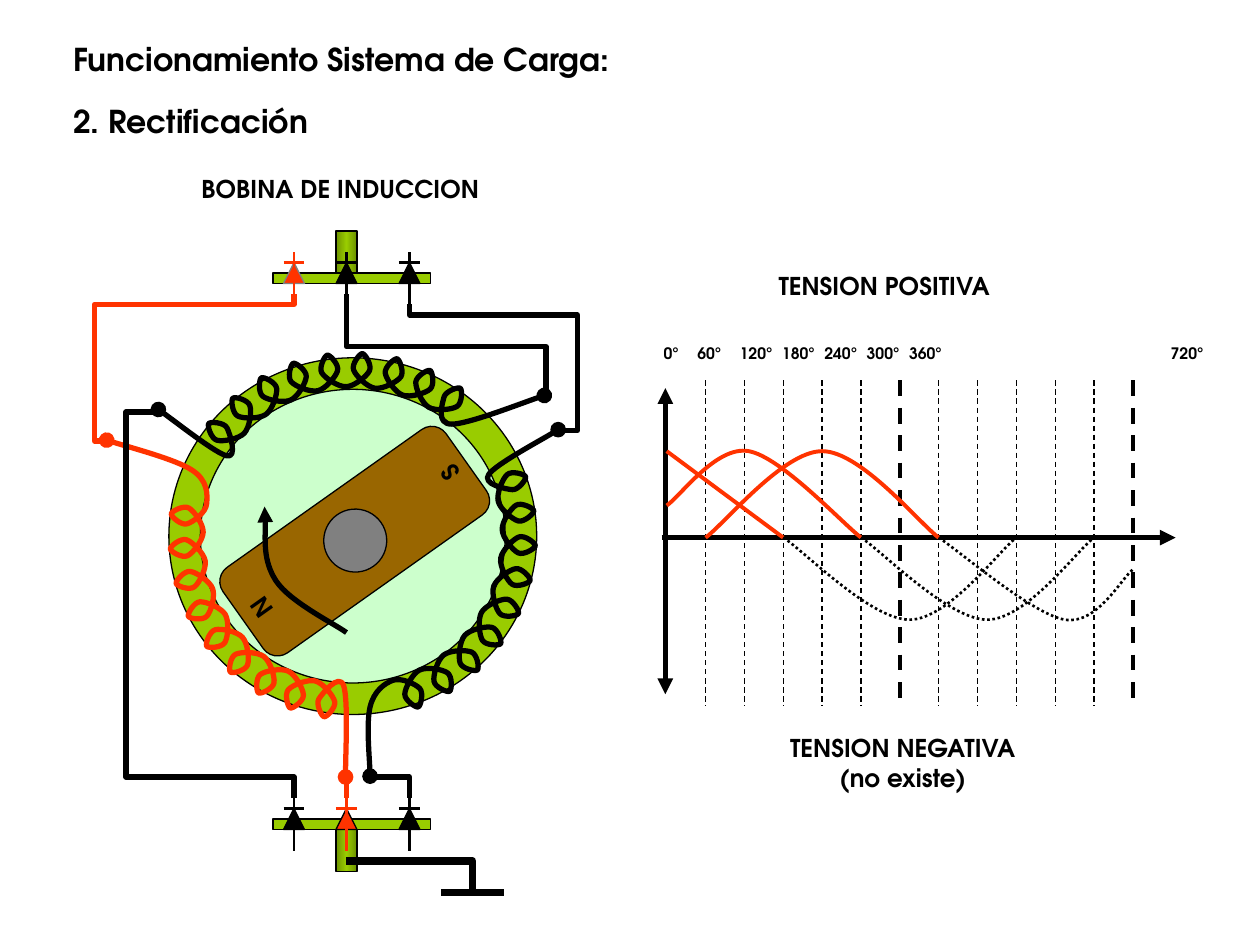
"""Build the slide about rectification in a vehicle charging system."""
from copy import deepcopy
from dataclasses import dataclass
from math import cos, pi, radians, sin

from lxml import etree
from pptx import Presentation
from pptx.dml.color import RGBColor
from pptx.enum.dml import MSO_LINE
from pptx.enum.shapes import MSO_CONNECTOR, MSO_SHAPE
from pptx.enum.text import MSO_ANCHOR, MSO_AUTO_SIZE, PP_ALIGN
from pptx.oxml.ns import qn
from pptx.util import Pt

STRAIGHT = MSO_CONNECTOR.STRAIGHT
OVAL, RECTANGLE = MSO_SHAPE.OVAL, MSO_SHAPE.RECTANGLE
ROUNDED, TRIANGLE = MSO_SHAPE.ROUNDED_RECTANGLE, MSO_SHAPE.ISOSCELES_TRIANGLE
DASH, DOTS = MSO_LINE.DASH, MSO_LINE.ROUND_DOT
LEFT, CENTER = PP_ALIGN.LEFT, PP_ALIGN.CENTER
TOP, GROW = MSO_ANCHOR.TOP, MSO_AUTO_SIZE.SHAPE_TO_FIT_TEXT
Point = tuple[float, float]
Points = list[Point]
Box = tuple[float, float, float, float]


@dataclass(frozen=True)
class Theme:
    font: str = "TeX Gyre Adventor"
    heading: float = 18
    label: float = 14
    scale: float = 9
    thin: float = 0.75
    wire: float = 3
    black: str = "000000"
    red: str = "FF3300"
    green: str = "99CC00"
    dark_green: str = "6D9200"
    mint: str = "CCFFCC"
    brown: str = "996600"
    gray: str = "808080"


THEME = Theme()


@dataclass(frozen=True)
class Stroke:
    color: str = THEME.black
    width: float = THEME.wire
    dash: MSO_LINE | None = None
    head: str = ""
    tail: str = ""


@dataclass(frozen=True)
class Label:
    text: str
    box: Box
    rotation: float = 0
    alignment: PP_ALIGN = LEFT


@dataclass(frozen=True)
class Coil:
    first_angle: float
    lead_in: Points
    lead_out: Points
    color: str = THEME.black


@dataclass(frozen=True)
class Wire:
    start: Point
    turns: list[float]
    color: str = THEME.black
    width: float = THEME.wire


RING_X, RING_Y, RING_RADIUS, LOOP_DEPTH = 201.6, 306.4, 95, 9.5
TURNS, TURN_ANGLE, LOOP_ANGLE = 9, 11, 5.5
ROTOR_ANGLE = 234.7
COLUMN_START, COLUMN_GAP, AXIS, AMPLITUDE = 403.2, 22.2, 307.2, 49.4
COILS = [
    Coil(212.5, [(90.5, 234)], [(311, 226)]),
    Coil(335.5, [(319, 245.5)], [(211.5, 404), (211.5, 443.5)]),
    Coil(93.5, [(197.5, 444)], [(109.5, 268.5), (61, 251.5)], THEME.red),
]
WIRES = [
    Wire((234, 456), [444, 210]),
    Wire((168, 456), [444, 72, 235.5, 91.5]),
    Wire((234, 174), [180, 330, 246, 318]),
    Wire((198, 168), [198, 312, 228]),
    Wire((168, 168), [174, 54, 252, 62], THEME.red),
    Wire((198, 492), [492, 270, 510], width=4.5),
]
POSITIVE_STARTS = {6: [(0, 0), (3, 1)], 4: [(-1, 0.37), (1.1, 1)], 2: [(-1, 1)]}
NEGATIVE_ENDS = {6: (11, -0.37), 4: (10, 0), 2: (8, 0)}
LABELS = [
    Label("BOBINA DE INDUCCION", (108, 95.8, 179.3, 24)),
    Label("TENSION POSITIVA", (437.8, 151.2, 136.8, 24)),
    Label("TENSION NEGATIVA\n(no existe)", (442.8, 415.4, 146.2, 41), alignment=CENTER),
]
POLES = [Label("N", (136.8, 334.8, 25.2, 24), ROTOR_ANGLE), Label("S", (245.5, 257.8, 22.3, 24), ROTOR_ANGLE)]
ANGLES = [f"{degrees}°" for degrees in (*range(0, 361, 60), 720)]
ANGLE_STOPS = [24.2 * index - 5 for index in range(1, 7)] + [289.7]


def apply_stroke(shape, stroke: Stroke) -> None:
    shape.line.color.rgb = RGBColor.from_string(stroke.color)
    shape.line.width = Pt(stroke.width)
    if stroke.dash:
        shape.line.dash_style = stroke.dash
    for tag, kind in (("a:headEnd", stroke.head), ("a:tailEnd", stroke.tail)):
        if kind:
            etree.SubElement(shape.line._get_or_add_ln(), qn(tag), type=kind)


def add_line(slide, start: Point, end: Point, stroke: Stroke) -> None:
    line = slide.shapes.add_connector(STRAIGHT, *(Pt(value) for value in start + end))
    apply_stroke(line, stroke)
    etree.SubElement(line._element.spPr, qn("a:effectLst"))


def add_outline(slide, points: Points, stroke: Stroke):
    corners = [(Pt(x), Pt(y)) for x, y in points]
    builder = slide.shapes.build_freeform(*corners[0])
    builder.add_line_segments(corners[1:], close=False)
    shape = builder.convert_to_shape()
    shape.fill.background()
    shape.shadow.inherit = False
    apply_stroke(shape, stroke)
    return shape


def smooth_controls(points: Points) -> Points:
    padded = [points[0], *points, points[-1]]
    controls = [points[0]]
    for before, start, end, after in zip(padded, padded[1:], padded[2:], padded[3:]):
        controls.append(tuple(s + (e - b) / 6 for b, s, e in zip(before, start, end)))
        controls.append(tuple(e - (a - s) / 6 for s, e, a in zip(start, end, after)))
        controls.append(end)
    return controls


def add_curve(slide, points: Points, stroke: Stroke) -> None:
    shape = add_outline(slide, smooth_controls(points), stroke)
    segments = list(shape._element.iter(qn("a:lnTo")))
    for first, second, third in zip(segments[::3], segments[1::3], segments[2::3]):
        first.tag = qn("a:cubicBezTo")
        for segment in (second, third):
            first.append(segment[0])
            segment.getparent().remove(segment)


def add_coil(slide, coil: Coil) -> None:
    loops = []
    for quarter in range(4 * TURNS + 1):
        phase = quarter * pi / 2
        angle = radians(coil.first_angle + TURN_ANGLE * quarter / 4 + LOOP_ANGLE * sin(phase))
        radius = RING_RADIUS - LOOP_DEPTH * cos(phase)
        loops.append((RING_X + radius * cos(angle), RING_Y + radius * sin(angle)))
    add_curve(slide, coil.lead_in + loops + coil.lead_out, Stroke(coil.color, head="oval", tail="oval"))


def add_wire(slide, wire: Wire) -> None:
    points = [wire.start]
    for index, value in enumerate(wire.turns):
        x, y = points[-1]
        points.append((value, y) if index % 2 else (x, value))
    add_outline(slide, points, Stroke(wire.color, wire.width))


def add_solid(slide, kind: MSO_SHAPE, box: Box, color: str, outline: str = THEME.black, rotation: float = 0):
    shape = slide.shapes.add_shape(kind, *(Pt(value) for value in box))
    shape.fill.solid()
    shape.fill.fore_color.rgb = RGBColor.from_string(color)
    shape.shadow.inherit = False
    shape.rotation = rotation
    apply_stroke(shape, Stroke(outline, THEME.thin))
    return shape


def add_terminal(slide, top: float) -> None:
    terminal = add_solid(slide, RECTANGLE, (192, top, 12, 24), THEME.green)
    terminal.fill.gradient()
    terminal.fill.gradient_angle = 0
    for stop, color, position in zip(terminal.fill.gradient_stops, (THEME.dark_green, THEME.green), (0, 0.5)):
        stop.color.rgb = RGBColor.from_string(color)
        stop.position = position
    stops = terminal._element.spPr.find(".//" + qn("a:gsLst"))
    last = deepcopy(stops[0])
    last.set("pos", "100000")
    stops.append(last)


def add_diode(slide, left: float, top: float, color: str, outline: str) -> None:
    add_solid(slide, TRIANGLE, (left, top, 12, 12), color, outline)
    add_line(slide, (left, top), (left + 12, top), Stroke(color, 2.25))
    add_line(slide, (left + 6, top - 6), (left + 6, top + 24), Stroke(color, 1.5))


def write_text(shape, label: Label, size: float, wrap: bool = False) -> None:
    shape.left, shape.top, shape.width, shape.height = (Pt(value) for value in label.box)
    shape.rotation = label.rotation
    frame = shape.text_frame
    frame.text = label.text
    frame.word_wrap, frame.auto_size, frame.vertical_anchor = wrap, GROW, TOP
    for paragraph in frame.paragraphs:
        paragraph.alignment, paragraph.space_before = label.alignment, Pt(0)
        for run in paragraph.runs:
            run.font.name, run.font.size, run.font.bold = THEME.font, Pt(size), True
            run.font.color.rgb = RGBColor.from_string(THEME.black)


def add_label(slide, label: Label, size: float = THEME.label, wrap: bool = False):
    shape = slide.shapes.add_textbox(*(Pt(value) for value in label.box))
    write_text(shape, label, size, wrap)
    return shape


def add_headings(slide) -> None:
    title, body = slide.shapes.title, slide.placeholders[1]
    write_text(title, Label("Funcionamiento Sistema de Carga:", (34.6, 19.4, 321.8, 29)), THEME.heading)
    write_text(body, Label("2. Rectificación", (34.6, 54.7, 159.8, 29)), THEME.heading)
    properties = body.text_frame.paragraphs[0]._p.get_or_add_pPr()
    properties.set("marL", "0")
    properties.set("indent", "0")
    etree.SubElement(properties, qn("a:buNone"))


def add_alternator(slide) -> None:
    add_solid(slide, OVAL, (96.5, 204.5, 210.2, 203.8), THEME.green)
    add_solid(slide, OVAL, (114.5, 222.5, 174.2, 167.8), THEME.mint)
    for coil in COILS:
        add_coil(slide, coil)
    add_solid(slide, ROUNDED, (172.8, 231.1, 59.8, 156.2), THEME.brown, rotation=ROTOR_ANGLE)
    add_solid(slide, OVAL, (185, 290.9, 36, 36), THEME.gray, rotation=ROTOR_ANGLE)
    add_curve(slide, [(198, 361.5), (157.7, 331.9), (151.2, 289.5)], Stroke(tail="triangle"))
    for pole in POLES:
        add_label(slide, pole)
    for plate, terminal, red_left, outline in ((156, 132, 162, THEME.gray), (468, 474, 192, THEME.black)):
        add_solid(slide, RECTANGLE, (156, plate, 90, 6), THEME.green)
        add_terminal(slide, terminal)
        for left in (162, 192, 228):
            colors = (THEME.red, outline) if left == red_left else (THEME.black, THEME.black)
            add_diode(slide, left, plate - 6, *colors)
    for wire in WIRES:
        add_wire(slide, wire)
    add_line(slide, (198, 456), (198, 444), Stroke(THEME.red))
    add_line(slide, (252, 510), (288, 510), Stroke(width=4.5))


def add_wave(slide, levels: Points, stroke: Stroke) -> None:
    points = [(COLUMN_START + COLUMN_GAP * column, AXIS - AMPLITUDE * level) for column, level in levels]
    add_curve(slide, points, stroke)


def add_voltage_plot(slide) -> None:
    for index in range(12):
        x = COLUMN_START + COLUMN_GAP * index
        width = 2.25 if index in (5, 11) else THEME.thin
        add_line(slide, (x, 217.4), (x, 403.2), Stroke(width=width, dash=DASH))
    scale = add_label(slide, Label("\t".join(ANGLES), (372.2, 193, 330, 18)), THEME.scale, wrap=True)
    tabs = etree.SubElement(scale.text_frame.paragraphs[0]._p.get_or_add_pPr(), qn("a:tabLst"))
    for stop in ANGLE_STOPS:
        etree.SubElement(tabs, qn("a:tab"), pos=str(Pt(stop)), algn="l")
    add_line(slide, (380.2, 221.8), (380.2, 396.7), Stroke(head="triangle", tail="triangle"))
    add_line(slide, (378, AXIS), (671.8, AXIS), Stroke(tail="triangle"))
    for zero, start in POSITIVE_STARTS.items():
        add_wave(slide, [*start, (zero, 0)], Stroke(THEME.red, 2.25))
        trough = (zero + 3.25, -0.95)
        add_wave(slide, [(zero, 0), trough, NEGATIVE_ENDS[zero]], Stroke(width=1.5, dash=DOTS))


def main() -> None:
    presentation = Presentation()
    presentation.slide_width, presentation.slide_height = Pt(720), Pt(540)
    slide = presentation.slides.add_slide(presentation.slide_layouts[1])
    add_headings(slide)
    for label in LABELS:
        add_label(slide, label)
    add_alternator(slide)
    add_voltage_plot(slide)
    presentation.save("out.pptx")


if __name__ == "__main__":
    main()
